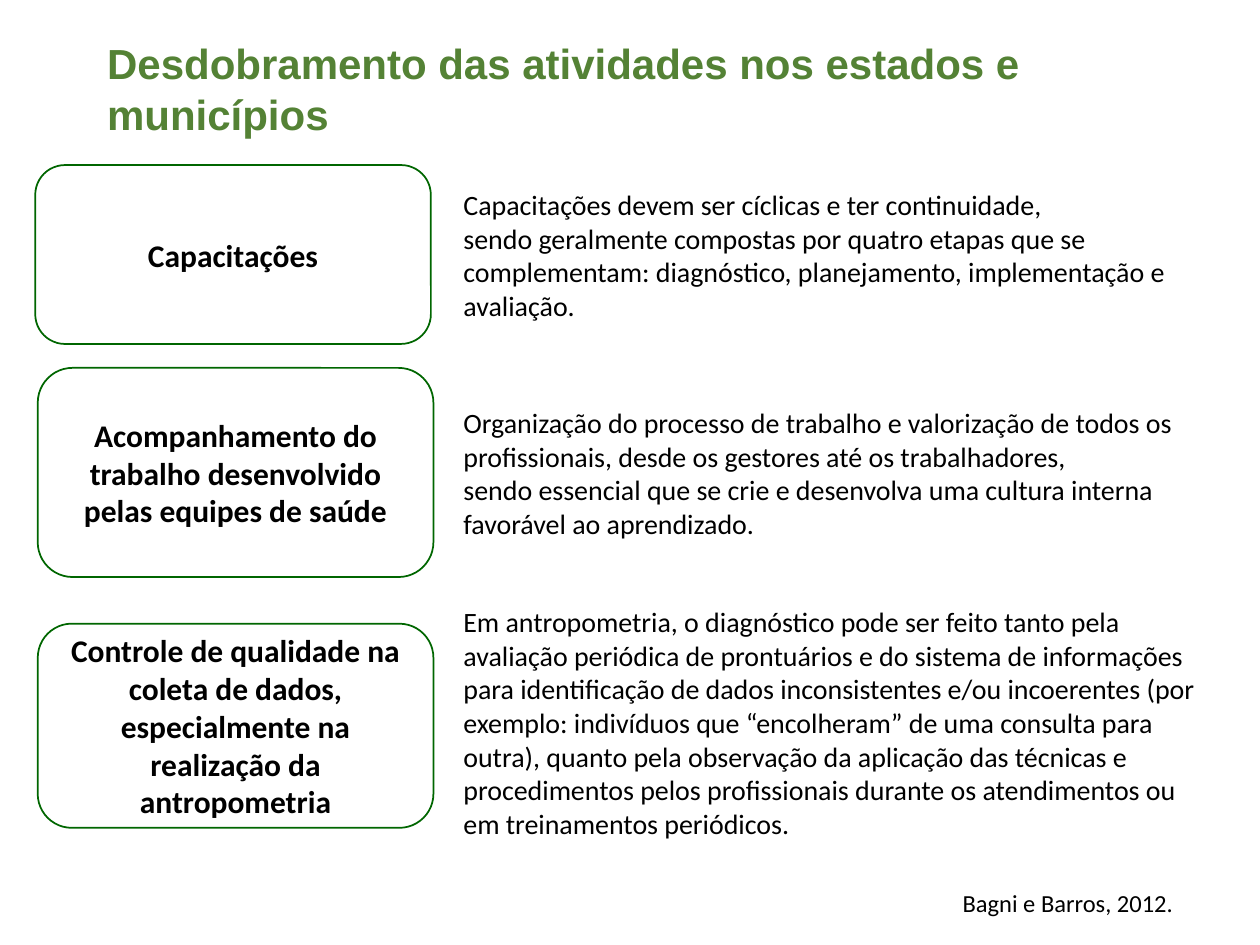
from pptx import Presentation
from pptx.dml.color import RGBColor as Rgb
from pptx.enum.shapes import MSO_SHAPE as Kind
from pptx.enum.text import MSO_ANCHOR as Anchor, MSO_AUTO_SIZE as Fit, PP_ALIGN as Align
from pptx.util import Inches, Pt

HUES = {"title": "548235", "edge": "006600", "fill": "FFFFFF", "text": "000000"}

deck = Presentation()
deck.slide_width, deck.slide_height = Inches(10), Inches(7.5)
slide = deck.slides.add_slide(deck.slide_layouts[5])

# Grid of 100 columns by 75 rows
COL, ROW = deck.slide_width / 100, deck.slide_height / 75


def grid(x, y, wide, high):
    return int(x * COL), int(y * ROW), int(wide * COL), int(high * ROW)


def write(shape, text, size=16, font="Calibri", hue="text", bold=False,
          align=Align.LEFT, anchor=Anchor.TOP):
    frame = shape.text_frame
    frame.word_wrap = True
    frame.auto_size = Fit.NONE
    frame.vertical_anchor = anchor
    frame.text = text
    for para in frame.paragraphs:
        para.alignment = align
        para.font.size = Pt(size)
        para.font.name = font
        para.font.bold = bold
        para.font.color.rgb = Rgb.from_string(HUES[hue])


# Title
title = slide.shapes.title
title.left, title.top, title.width, title.height = grid(7.5, 2.5, 86.6, 9.1)
write(title, "Desdobramento das atividades nos estados e municípios",
      size=24, font="Arial", hue="title", bold=True)

# Rows: box left, top and height, label, text top and height, text
rows = [
    (2.8, 13.1, 14.2, "Capacitações", 14.4, 11.8,
     "Capacitações devem ser cíclicas e ter continuidade,\n"
     "sendo geralmente compostas por quatro etapas que se complementam: "
     "diagnóstico, planejamento, implementação e avaliação."),
    (3, 29.2, 16.6, "Acompanhamento do trabalho desenvolvido pelas equipes de saúde",
     31.7, 11.8,
     "Organização do processo de trabalho e valorização de todos os "
     "profissionais, desde os gestores até os trabalhadores,\n"
     "sendo essencial que se crie e desenvolva uma cultura interna "
     "favorável ao aprendizado."),
    (3, 49.5, 16.2, "Controle de qualidade na coleta de dados, especialmente na "
     "realização da antropometria", 47.5, 19.9,
     "Em antropometria, o diagnóstico pode ser feito tanto pela avaliação "
     "periódica de prontuários e do sistema de informações para identificação "
     "de dados inconsistentes e/ou incoerentes (por exemplo: indivíduos que "
     "“encolheram” de uma consulta para outra), quanto pela observação da "
     "aplicação das técnicas e procedimentos pelos profissionais durante os "
     "atendimentos ou em treinamentos periódicos."),
]
for left, top, high, label, text_top, text_high, text in rows:
    box = slide.shapes.add_shape(Kind.ROUNDED_RECTANGLE, *grid(left, top, 31.4, high))
    box.shadow.inherit = False
    box.fill.solid()
    box.fill.fore_color.rgb = Rgb.from_string(HUES["fill"])
    box.line.color.rgb = Rgb.from_string(HUES["edge"])
    box.line.width = Pt(1)
    write(box, label, size=18, bold=True, align=Align.CENTER, anchor=Anchor.MIDDLE)
    write(slide.shapes.add_textbox(*grid(35.8, text_top, 61.4, text_high)), text)

# Source
source = slide.shapes.add_textbox(*grid(64.2, 70, 29.9, 3.4))
write(source, "Bagni e Barros, 2012.", size=14, align=Align.RIGHT)

deck.save("out.pptx")
